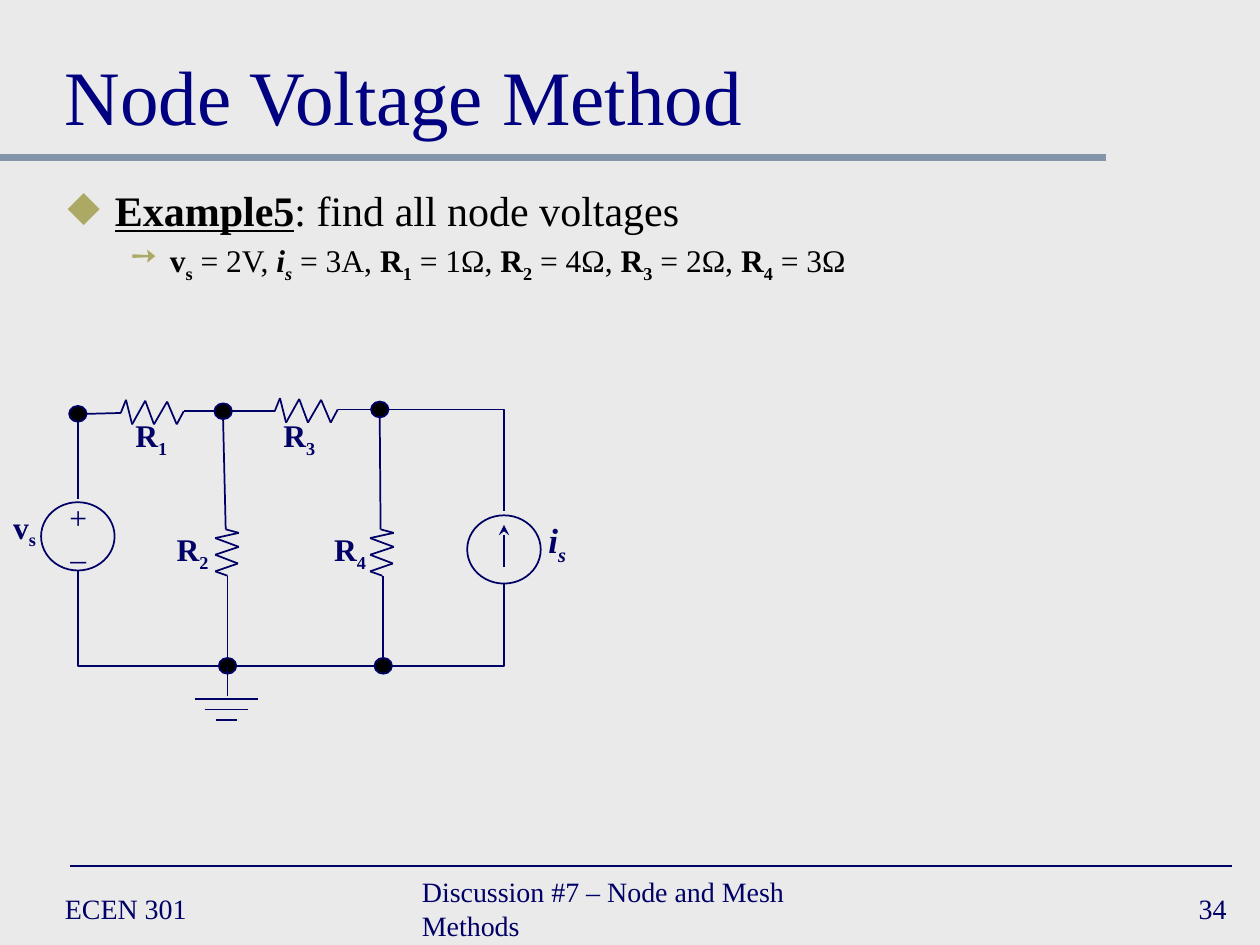
from itertools import pairwise

from lxml.etree import SubElement
from pptx import Presentation
from pptx.dml.color import RGBColor
from pptx.enum.shapes import MSO_CONNECTOR, MSO_SHAPE
from pptx.enum.text import MSO_ANCHOR, PP_ALIGN
from pptx.oxml.ns import qn
from pptx.util import Pt

PAPER = RGBColor(0xEA, 0xEA, 0xEA)
NAVY = RGBColor(0x00, 0x00, 0x66)
TITLE_BLUE = RGBColor(0x00, 0x00, 0x80)
SLATE = RGBColor(0x84, 0x95, 0xA9)
OLIVE = RGBColor(0xAC, 0xA9, 0x64)
BLACK = RGBColor(0x00, 0x00, 0x00)

HORIZONTAL_ZIGZAG = [(0, 0), (3, -7.5), (6.5, 6.5), (14, -7),
                     (19, 6.5), (26.5, -6.5), (32, 6.5), (36, -1)]
VERTICAL_ZIGZAG = [(0, 0), (7.5, 2), (-6, 5), (7.5, 10),
                   (-6, 14.5), (7, 19.5), (-6, 24), (1, 26.5)]


class CircuitSlide:
    font_name = "Times New Roman"

    def __init__(self, slide):
        self.slide = slide
        slide.background.fill.solid()
        slide.background.fill.fore_color.rgb = PAPER

    def wire(self, start, end, color=NAVY, width=1, kind=MSO_CONNECTOR.STRAIGHT):
        connector = self.slide.shapes.add_connector(
            kind, *(Pt(value) for value in (*start, *end)))
        connector.line.color.rgb = color
        connector.line.width = Pt(width)
        SubElement(connector._element.spPr, qn("a:effectLst"))
        return connector

    def corner_wire(self, start, end):
        connector = self.wire(start, end, kind=MSO_CONNECTOR.ELBOW)
        connector._element.spPr.find(qn("a:prstGeom")).set("prst", "bentConnector2")

    def arrow(self, start, end):
        line = self.wire(start, end).line._get_or_add_ln()
        SubElement(line, qn("a:tailEnd"), type="stealth")

    def resistor(self, x, y, zigzag):
        for (x1, y1), (x2, y2) in pairwise(zigzag):
            self.wire((x + x1, y + y1), (x + x2, y + y2))

    def circle(self, center, width, height, fill=None):
        x, y = center
        oval = self.slide.shapes.add_shape(
            MSO_SHAPE.OVAL, Pt(x - width / 2), Pt(y - height / 2), Pt(width), Pt(height))
        oval.shadow.inherit = False
        oval.line.color.rgb = NAVY
        oval.line.width = Pt(1)
        if fill is None:
            oval.fill.background()
        else:
            oval.fill.solid()
            oval.fill.fore_color.rgb = fill

    def frame(self, left, top, width, height, anchor=MSO_ANCHOR.TOP, wrap=True):
        box = self.slide.shapes.add_textbox(Pt(left), Pt(top), Pt(width), Pt(height))
        box.text_frame.word_wrap = wrap
        box.text_frame.vertical_anchor = anchor
        return box.text_frame

    def style(self, paragraph, size, color=NAVY, align=PP_ALIGN.LEFT):
        paragraph.alignment = align
        paragraph.font.name = self.font_name
        paragraph.font.size = Pt(size)
        paragraph.font.color.rgb = color

    def text(self, left, top, width, height, words, size, color=NAVY,
             align=PP_ALIGN.LEFT, anchor=MSO_ANCHOR.MIDDLE):
        paragraph = self.frame(left, top, width, height, anchor).paragraphs[0]
        paragraph.text = words
        self.style(paragraph, size, color, align)

    def symbol(self, paragraph, name, index, italic=False):
        for words, offset in ((name, None), (index, "-25000")):
            run = paragraph.add_run()
            run.text = words
            run.font.bold = True
            if italic:
                run.font.italic = True
            if offset:
                run.font._element.set("baseline", offset)

    def label(self, left, top, width, name, index, size=18, italic=False):
        paragraph = self.frame(left, top, width, 29, wrap=False).paragraphs[0]
        self.symbol(paragraph, name, index, italic)
        self.style(paragraph, size, align=PP_ALIGN.CENTER)

    def bullet(self, paragraph, mark, margin, indent, size):
        properties = paragraph._p.get_or_add_pPr()
        properties.set("marL", str(Pt(margin)))
        properties.set("indent", str(Pt(-indent)))
        bullet_color = SubElement(properties, qn("a:buClr"))
        SubElement(bullet_color, qn("a:srgbClr"), val=str(OLIVE))
        SubElement(properties, qn("a:buChar"), char=mark)
        paragraph.line_spacing = 0.9
        self.style(paragraph, size, BLACK)

    def example(self):
        body = self.frame(31.5, 105, 658, 75)
        task = body.paragraphs[0]
        self.bullet(task, "◆", 27, 27, 24)
        heading = task.add_run()
        heading.text = "Example5"
        heading.font.bold = heading.font.underline = True
        task.add_run().text = ": find all node voltages"

        givens = body.add_paragraph()
        givens.level = 1
        self.bullet(givens, "➙", 58.5, 22.5, 18)
        givens.space_before = Pt(3.6)
        for name, index, value in (("v", "s", " = 2V, "), ("i", "s", " = 3A, "),
                                   ("R", "1", " = 1Ω, "), ("R", "2", " = 4Ω, "),
                                   ("R", "3", " = 2Ω, "), ("R", "4", " = 3Ω")):
            self.symbol(givens, name, index, italic=name == "i")
            givens.add_run().text = value

    def polarity(self):
        signs = self.frame(32.5, 281, 24.5, 50, wrap=False)
        plus, minus = signs.paragraphs[0], signs.add_paragraph()
        plus.text, minus.text = "+", "–"
        minus.space_before = Pt(2)
        for sign in (plus, minus):
            self.style(sign, 18, align=PP_ALIGN.CENTER)


def main():
    deck = Presentation()
    deck.slide_width, deck.slide_height = Pt(720), Pt(540)
    page = CircuitSlide(deck.slides.add_slide(deck.slide_layouts[6]))

    page.wire((0, 90), (632, 90), SLATE, 4)
    page.wire((40, 495), (704, 495))
    page.text(30, 504, 156, 30, "ECEN 301", 16)
    page.text(234, 504, 276, 30, "Discussion #7 – Node and Mesh Methods", 16)
    page.text(558, 504, 150, 30, "34", 16, align=PP_ALIGN.RIGHT)
    page.text(30, 12, 660, 72, "Node Voltage Method", 44, TITLE_BLUE,
              anchor=MSO_ANCHOR.BOTTOM)
    page.example()

    for node in ((44.5, 236.5), (127.5, 235), (217, 234), (130, 380.5), (219, 380.5)):
        page.circle(node, 10, 9, BLACK)

    for x, y in ((69, 236), (157, 235)):
        page.resistor(x, y, HORIZONTAL_ZIGZAG)
    for x in (129, 217.5):
        page.resistor(x, 302.5, VERTICAL_ZIGZAG)

    for start, end in (((49.5, 236.5), (69, 236)), ((122.5, 235), (105, 235)),
                       ((132.5, 235), (157, 235)), ((212, 234), (193, 234)),
                       ((127.5, 239.5), (129, 302.5)), ((217, 239), (217.5, 302.5)),
                       ((130, 376), (130, 329)), ((219, 376), (219, 329)),
                       ((135, 380.5), (214, 380.5)), ((44.5, 285), (44.5, 241)),
                       ((130, 398), (130, 380.5))):
        page.wire(start, end)
    for start, end in (((125, 380.5), (44.5, 326)), ((224, 380.5), (288, 333.5)),
                       ((222, 234), (288, 292))):
        page.corner_wire(start, end)

    for half_width, y in ((18, 399.5), (12.5, 405.5), (6, 411.5)):
        page.wire((129.5 - half_width, y), (129.5 + half_width, y))

    for source in ((44.5, 306.5), (288, 314)):
        page.circle(source, 42, 39)
    page.arrow((288, 324), (288, 300))
    page.polarity()

    for left, top, width, index in ((66, 234, 41, "1"), (93, 299.5, 34, "2"),
                                    (150.5, 234, 41, "3"), (183, 299.5, 34, "4")):
        page.label(left, top, width, "R", index)
    page.label(0, 286.5, 28, "v", "s")
    page.label(306, 293, 25, "i", "s", size=20, italic=True)

    deck.save("out.pptx")


if __name__ == "__main__":
    main()
